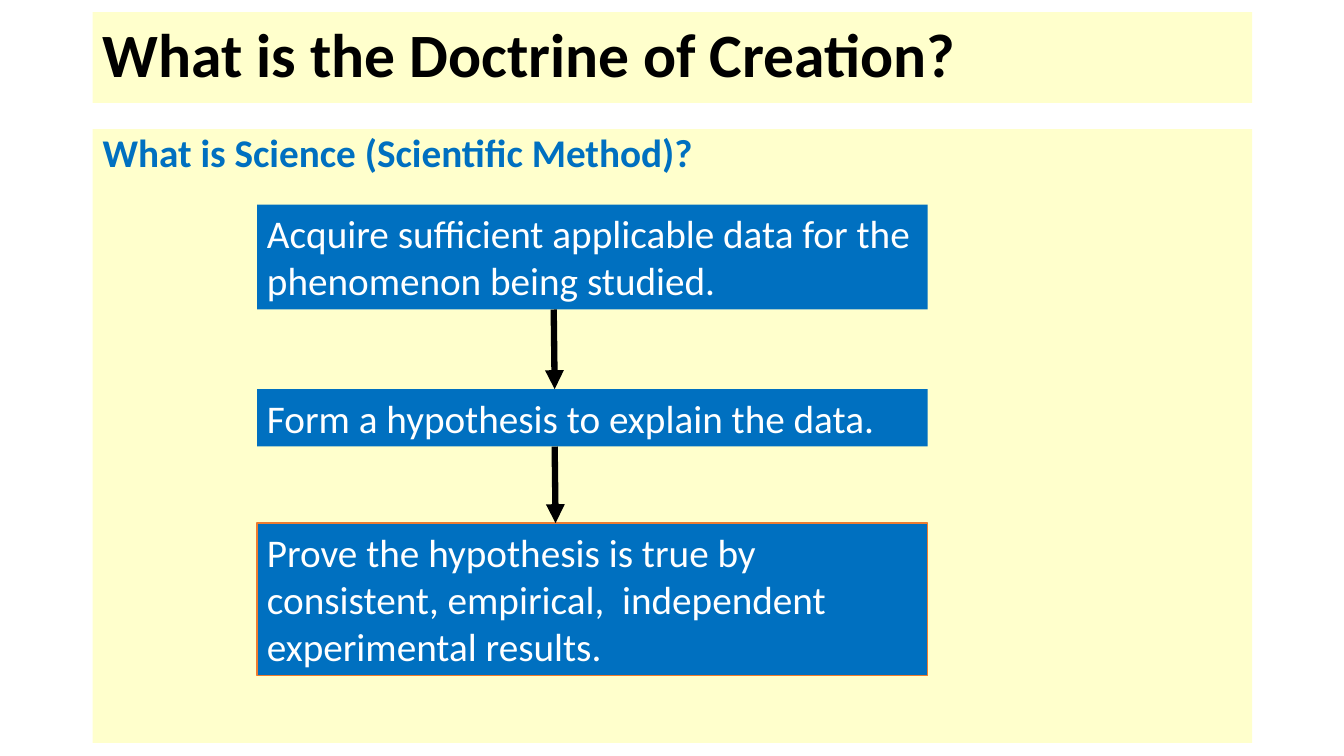
from dataclasses import dataclass
from itertools import pairwise

from lxml.etree import SubElement
from pptx import Presentation
from pptx.dml.color import RGBColor
from pptx.enum.shapes import MSO_CONNECTOR, MSO_SHAPE
from pptx.enum.text import MSO_ANCHOR, PP_ALIGN
from pptx.oxml.ns import qn
from pptx.util import Inches, Pt


@dataclass(frozen=True)
class Theme:
    font: str = "Calibri"
    cream: str = "FFFFCC"
    blue: str = "0070C0"
    orange: str = "ED7D31"
    black: str = "000000"
    white: str = "FFFFFF"
    title_size: int = 44
    text_size: int = 28
    arrow_width: float = 4.5
    border_width: float = 1
    tight_spacing: float = 0.9


THEME = Theme()
WIDTH, HEIGHT = Inches(13.33), Inches(7.5)
PANEL_LEFT, PANEL_WIDTH = 6.9, 86.27
STEP_LEFT, STEP_WIDTH = 19.13, 49.89
ARROW_X, ARROW_DRIFT = 41.2, 0.07

STEPS = [
    ("Acquire sufficient applicable data for the phenomenon being studied.",
     27.07, 13.87, None),
    ("Form a hypothesis to explain the data.", 51.47, 7.6, None),
    ("Prove the hypothesis is true by consistent, empirical,  independent "
     "experimental results.", 69.2, 20.13, THEME.orange),
]


def across(percent):
    return round(WIDTH * percent / 100)


def down(percent):
    return round(HEIGHT * percent / 100)


def place(area, left, top, width, height):
    area.left, area.top = across(left), down(top)
    area.width, area.height = across(width), down(height)


def paint(area, color):
    area.fill.solid()
    area.fill.fore_color.rgb = RGBColor.from_string(color)


def write(area, words, size, color, bold=False, spacing=1.0,
          anchor=MSO_ANCHOR.TOP):
    frame = area.text_frame
    frame.word_wrap = True
    frame.vertical_anchor = anchor
    paragraph = frame.paragraphs[0]
    paragraph.alignment = PP_ALIGN.LEFT
    paragraph.line_spacing = spacing
    run = paragraph.add_run()
    run.text = words
    run.font.name = THEME.font
    run.font.size = Pt(size)
    run.font.bold = bold
    run.font.color.rgb = RGBColor.from_string(color)


def add_title(slide, words):
    title = slide.shapes.title
    place(title, PANEL_LEFT, 1.6, PANEL_WIDTH, 12)
    paint(title, THEME.cream)
    write(title, words, THEME.title_size, THEME.black, True,
          THEME.tight_spacing, MSO_ANCHOR.MIDDLE)


def add_box(slide, left, top, width, height, fill, border=None):
    box = slide.shapes.add_shape(MSO_SHAPE.RECTANGLE, across(left), down(top),
                                 across(width), down(height))
    box.shadow.inherit = False
    paint(box, fill)
    if border:
        box.line.color.rgb = RGBColor.from_string(border)
        box.line.width = Pt(THEME.border_width)
    else:
        box.line.fill.background()
    return box


def add_arrow(slide, start_x, start_y, end_x, end_y):
    arrow = slide.shapes.add_connector(
        MSO_CONNECTOR.STRAIGHT, across(start_x), down(start_y),
        across(end_x), down(end_y))
    arrow.line.color.rgb = RGBColor.from_string(THEME.black)
    arrow.line.width = Pt(THEME.arrow_width)
    SubElement(arrow.line._get_or_add_ln(), qn("a:tailEnd"), type="triangle")
    SubElement(arrow._element.spPr, qn("a:effectLst"))


def add_flow(slide, steps):
    for words, top, height, border in steps:
        step = add_box(slide, STEP_LEFT, top, STEP_WIDTH, height,
                       THEME.blue, border)
        write(step, words, THEME.text_size, THEME.white)
    for index, (upper, lower) in enumerate(pairwise(steps)):
        start_x = ARROW_X + index * ARROW_DRIFT
        add_arrow(slide, start_x, upper[1] + upper[2],
                  start_x + ARROW_DRIFT, lower[1])


def main():
    deck = Presentation()
    deck.slide_width, deck.slide_height = WIDTH, HEIGHT
    slide = deck.slides.add_slide(deck.slide_layouts[5])
    add_title(slide, "What is the Doctrine of Creation?")
    panel = add_box(slide, PANEL_LEFT, 17.07, PANEL_WIDTH, 81.2, THEME.cream)
    write(panel, "What is Science (Scientific Method)?", THEME.text_size,
          THEME.blue, True, THEME.tight_spacing)
    add_flow(slide, STEPS)
    deck.save("out.pptx")


if __name__ == "__main__":
    main()
